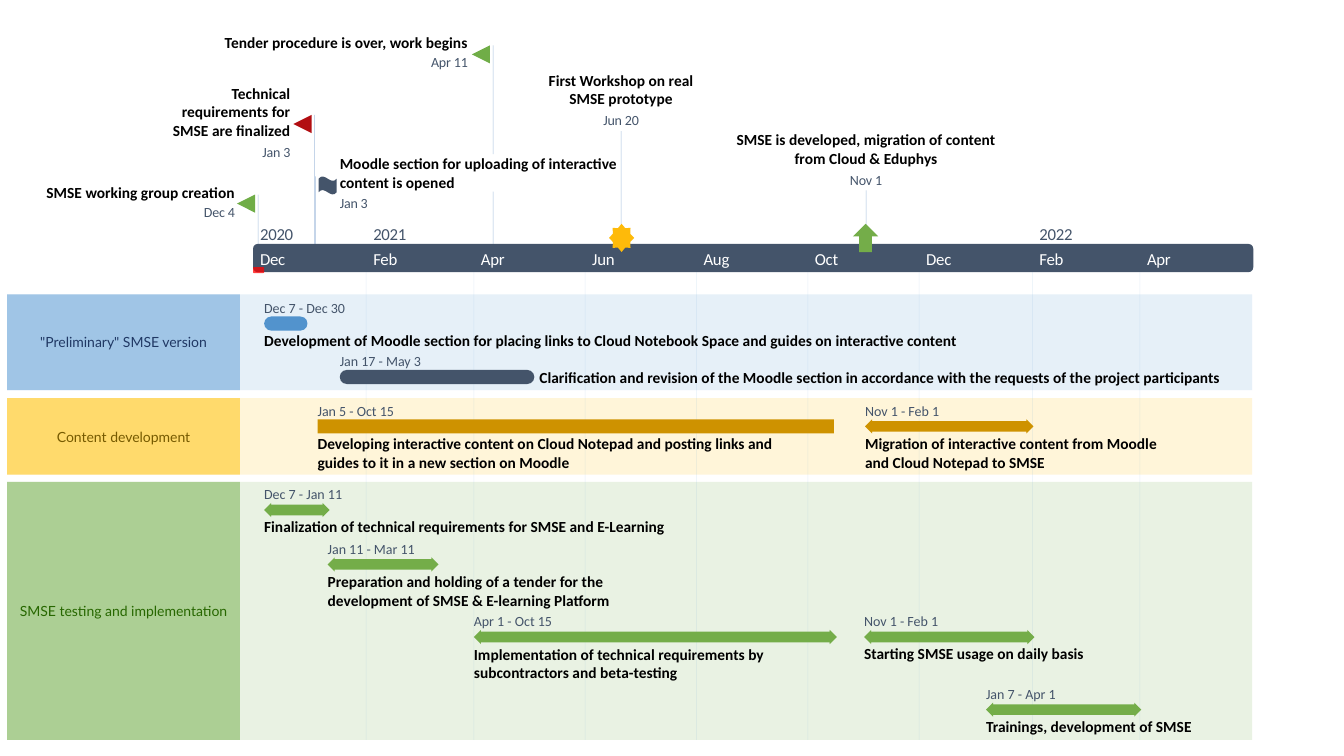
from itertools import accumulate
from lxml import etree
from pptx import Presentation
from pptx import util as u
from pptx.dml.color import RGBColor
from pptx.enum import shapes, text
from pptx.oxml.ns import qn

COLORS = {
    "slate": "44546A", "white": "FFFFFF", "black": "000000",
    "blue": "5B9BD5", "yellow": "FFC000", "green": "70AD47",
    "blue_text": "203864", "yellow_text": "765A00", "green_text": "276700",
    "blue_bar": "5293CD", "gold_bar": "CE9200", "green_bar": "74AD49",
    "stem": "4F81BD", "crimson": "B20E12", "star": "FEBA0A", "red": "FF0000",
}
G = shapes.MSO_SHAPE
ALIGN = {"l": text.PP_ALIGN.LEFT, "c": text.PP_ALIGN.CENTER, "r": text.PP_ALIGN.RIGHT}
AXIS_X, DAY_W, BAR_H = 2.51, 0.0181, 0.14
MONTHS = ["Dec", "Feb", "Apr", "Jun", "Aug", "Oct", "Dec", "Feb", "Apr"]
MONTH_DAYS = [0, 62, 59, 61, 61, 61, 61, 62, 59]
YEARS = {0: "2020", 1: "2021", 7: "2022"}

BANDS = [
    ('"Preliminary" SMSE version', 2.92, 0.95, "blue"),
    ("Content development", 3.95, 0.76, "yellow"),
    ("SMSE testing and implementation", 4.78, 2.56, "green"),
]

TASKS = [
    (2.62, 3.14, 0.43, G.ROUNDED_RECTANGLE, "blue_bar", "Dec 7 - Dec 30", 7.1, 1,
     "Development of Moodle section for placing links to Cloud Notebook Space and guides on interactive content"),
    (3.15, 4.16, 5.12, G.RECTANGLE, "gold_bar", "Jan 5 - Oct 15", 4.6, 2,
     "Developing interactive content on Cloud Notepad and posting links and guides to it in a new section on Moodle"),
    (8.58, 4.16, 1.67, G.LEFT_RIGHT_ARROW, "gold_bar", "Nov 1 - Feb 1", 2.93, 2,
     "Migration of interactive content from Moodle and Cloud Notepad to SMSE"),
    (2.62, 4.99, 0.65, G.LEFT_RIGHT_ARROW, "green_bar", "Dec 7 - Jan 11", 4.1, 1,
     "Finalization of technical requirements for SMSE and E-Learning"),
    (3.25, 5.53, 1.1, G.LEFT_RIGHT_ARROW, "green_bar", "Jan 11 - Mar 11", 2.85, 2,
     "Preparation and holding of a tender for the development of SMSE & E-learning Platform"),
    (4.7, 6.25, 3.6, G.LEFT_RIGHT_ARROW, "green_bar", "Apr 1 - Oct 15", 2.92, 2,
     "Implementation of technical requirements by subcontractors and beta-testing"),
    (8.57, 6.25, 1.69, G.LEFT_RIGHT_ARROW, "green_bar", "Nov 1 - Feb 1", 2.3, 1,
     "Starting SMSE usage on daily basis"),
    (9.78, 6.97, 1.54, G.LEFT_RIGHT_ARROW, "green_bar", "Jan 7 - Apr 1", 2.2, 1,
     "Trainings, development of SMSE"),
]

STEMS = [(2.56, 1.93, 2.42), (8.59, 1.89, 2.36), (3.13, 1.75, 2.42), (3.12, 1.14, 2.42),
         (4.89, 0.45, 1.53), (4.89, 1.9, 2.42), (6.16, 1.3, 2.36)]

MARKERS = [
    (G.FLOWCHART_MERGE, 2.35, 1.93, 0.18, 0.18, "green", 90),
    (G.UP_ARROW, 8.46, 2.22, 0.25, 0.28, "green_bar", 0),
    (G.WAVE, 3.16, 1.75, 0.18, 0.18, "slate", 0),
    (G.FLOWCHART_MERGE, 2.91, 1.14, 0.18, 0.18, "crimson", 90),
    (G.FLOWCHART_MERGE, 4.68, 0.45, 0.18, 0.18, "green", 90),
    (G.STAR_8_POINT, 6.04, 2.22, 0.25, 0.28, "star", 0),
]

MILESTONES = [
    ("SMSE working group creation", 0.33, 1.81, 2.0, 0.19, "Dec 4", 2.02, "r"),
    ("SMSE is developed, migration of content from Cloud & Eduphys",
     7.29, 1.29, 2.6, 0.37, "Nov 1", 1.7, "c"),
    ("Moodle section for uploading of interactive content is opened",
     3.37, 1.53, 2.8, 0.37, "Jan 3", 1.93, "l"),
    ("Technical requirements for SMSE are finalized", 1.71, 0.83, 1.17, 0.56, "Jan 3", 1.42, "r"),
    ("Tender procedure is over, work begins", 2.14, 0.32, 2.5, 0.19, "Apr 11", 0.53, "r"),
    ("First Workshop on real SMSE prototype", 5.42, 0.7, 1.48, 0.37, "Jun 20", 1.1, "c"),
]


class Timeline:
    def __init__(self, prs):
        self.s = prs.slides.add_slide(prs.slide_layouts[6])

    def paint(self, fill, color, alpha=100):
        fill.solid()
        fill.fore_color.rgb = RGBColor.from_string(COLORS[color])
        if alpha < 100:
            clr = fill._xPr.find(qn("a:solidFill"))[0]
            etree.SubElement(clr, qn("a:alpha")).set("val", str(alpha * 1000))

    def shape(self, kind, x, y, w, h, color, alpha=100, rotation=0, adj=()):
        sp = self.s.shapes.add_shape(kind, *map(u.Inches, (x, y, w, h)))
        sp.shadow.inherit = False
        sp.line.fill.background()
        sp.rotation = rotation
        self.paint(sp.fill, color, alpha)
        for i, value in enumerate(adj):
            sp.adjustments[i] = value

    def vline(self, x, top, bottom, color, alpha):
        ln = self.s.shapes.add_connector(
            shapes.MSO_CONNECTOR.STRAIGHT, *map(u.Inches, (x, top, x, bottom)))
        ln.line.width = u.Pt(0.38)
        self.paint(ln.line.fill, color, alpha)
        etree.SubElement(ln._element.spPr, qn("a:effectLst"))

    def label(self, words, x, y, w, h, size, color, align="l", bold=False,
              font="Calibri", wrap=True, spacing=0):
        tf = self.s.shapes.add_textbox(*map(u.Inches, (x, y, w, h))).text_frame
        tf.margin_left = tf.margin_right = tf.margin_top = tf.margin_bottom = 0
        tf.word_wrap = wrap
        tf.vertical_anchor = text.MSO_ANCHOR.MIDDLE
        p = tf.paragraphs[0]
        p.alignment = ALIGN[align]
        r = p.add_run()
        r.text = words
        r.font.size = u.Pt(size)
        r.font.name = font
        r.font.bold = bold
        r.font.color.rgb = RGBColor.from_string(COLORS[color])
        if spacing:
            r._r.get_or_add_rPr().set("spc", str(spacing))

    def title(self, words, x, y, w, h, align="l"):
        self.label(words, x, y, w, h, 11, "black", align, bold=True)

    def date(self, words, x, y, w, align="l", spacing=0):
        self.label(words, x, y, w, 0.17, 10, "slate", align, spacing=spacing)

    def bar(self, kind, x, y, w, color, dates):
        adj = {G.ROUNDED_RECTANGLE: (0.5,), G.LEFT_RIGHT_ARROW: (0.75, 0.5)}.get(kind, ())
        self.shape(kind, x, y, w, BAR_H, color, adj=adj)
        self.date(dates, x, y - 0.17, 1)


def main():
    prs = Presentation()
    prs.slide_width, prs.slide_height = u.Inches(13.33), u.Inches(7.5)
    t = Timeline(prs)

    for name, y, h, color in BANDS:
        t.shape(G.RECTANGLE, 0.07, y, 12.35, h, color, 15)
    for x, top, bottom in STEMS:
        t.vline(x, top, bottom, "stem", 50)
    t.shape(G.ROUNDED_RECTANGLE, AXIS_X, 2.42, 9.92, 0.28, "slate")
    for name, y, h, color in BANDS:
        t.shape(G.RECTANGLE, 0.07, y, 2.31, h, color, 50)
        t.label(name, 0.07, y + h / 2 - 0.08, 2.31, 0.16, 10, color + "_text", "c", font="Lato")

    for i, days in enumerate(accumulate(MONTH_DAYS)):
        x = AXIS_X + days * DAY_W
        if i:
            t.vline(x, 2.7, 7.34, "blue", 15)
        t.label(MONTHS[i], x + 0.07, 2.47, 0.26, 0.19, 12, "white", wrap=False, spacing=-20)
        if i in YEARS:
            t.label(YEARS[i], x + 0.07, 2.22, 0.33, 0.2, 12, "slate", wrap=False, spacing=-20)
    t.shape(G.ROUNDED_RECTANGLE, AXIS_X, 2.65, 0.11, 0.06, "red", 75)

    for x, y, w, kind, color, dates, title_w, rows, name in TASKS:
        t.bar(kind, x, y, w, color, dates)
        t.title(name, x, y + BAR_H, title_w, 0.19 * rows)
    t.bar(G.ROUNDED_RECTANGLE, 3.37, 3.67, 1.93, "slate", "Jan 17 - May 3")
    t.title("Clarification and revision of the Moodle section in accordance with "
            "the requests of the project participants", 5.35, 3.65, 7, 0.19)

    for kind, x, y, w, h, color, rotation in MARKERS:
        t.shape(kind, x, y, w, h, color, rotation=rotation)
    for name, x, y, w, h, day, day_y, align in MILESTONES:
        t.title(name, x, y, w, h, align)
        t.date(day, x, day_y, w, align, spacing=-10)

    prs.save("out.pptx")


if __name__ == "__main__":
    main()
